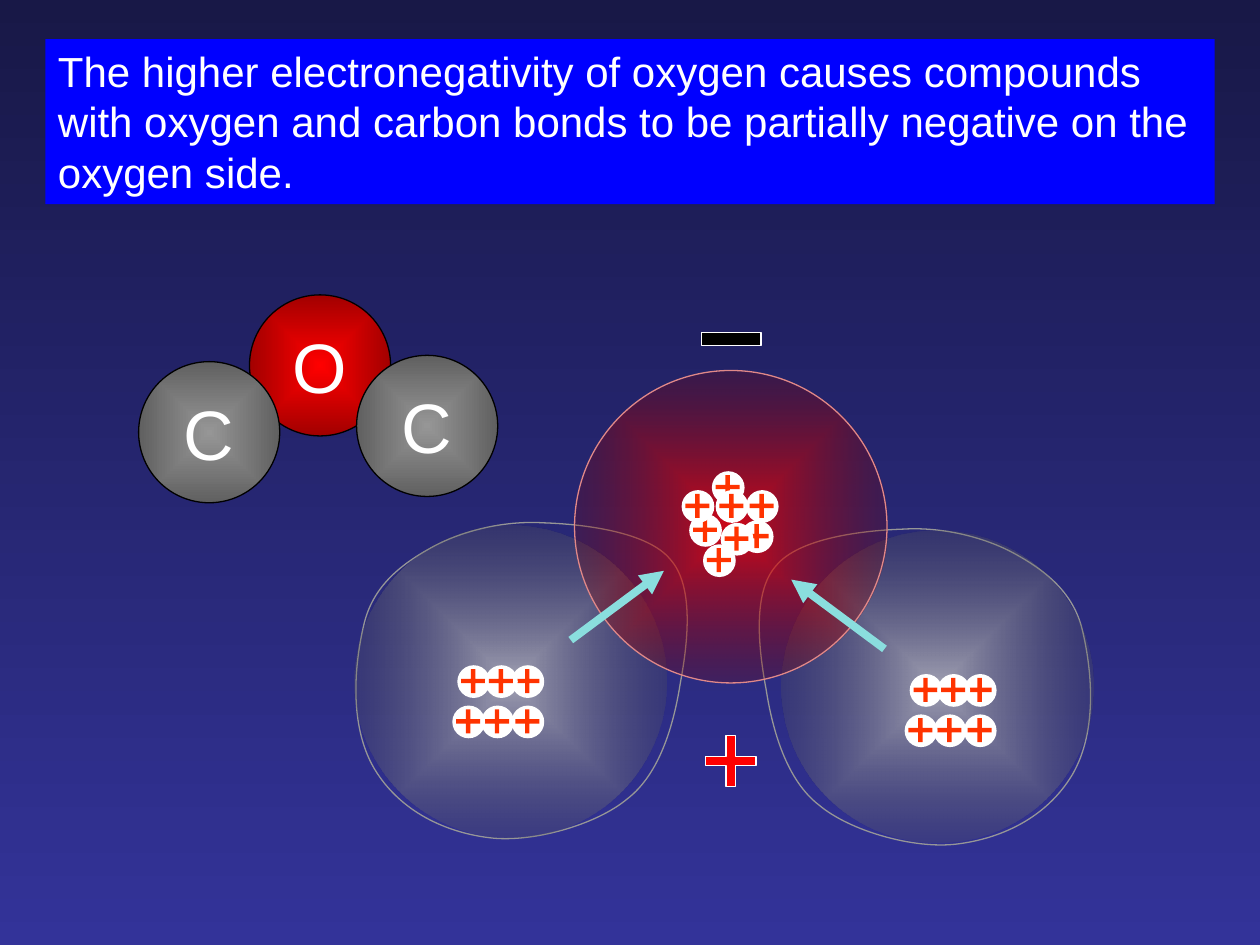
from pptx import Presentation
from pptx.dml.color import RGBColor as RGB
from pptx.enum.shapes import MSO_CONNECTOR as Conn, MSO_SHAPE as Kind
from pptx.enum.text import MSO_ANCHOR as Anchor, MSO_AUTO_SIZE as Auto, PP_ALIGN as Align
from pptx.oxml import parse_xml
from pptx.oxml.ns import nsdecls, qn
from pptx.util import Inches, Pt

HUE = {
    "top": "181847", "base": "333399", "title": "0000FF",
    "white": "FFFFFF", "black": "000000", "red": "FF0000",
    "proton": "FF3300", "arrow": "8ADEDE", "blob": "969696", "rim": "E08888",
}
FADE = {
    "carbon cloud": ("C0C0C0", 79, "595959", 25),
    "oxygen cloud": ("FF0000", 79, "760000", 25),
    "O": ("FF0000", 100, "A20000", 100),
    "C": ("969696", 100, "606060", 100),
}

deck = Presentation()
deck.slide_width, deck.slide_height = Inches(10), Inches(7.5)
slide = deck.slides.add_slide(deck.slide_layouts[5])

back = slide.background.fill
back.gradient()
back.gradient_angle = 270
for stop, name in zip(back.gradient_stops, ("top", "base")):
    stop.color.rgb = RGB.from_string(HUE[name])


def draw(home, kind, x, y, wide, high, fill, line=None):
    shape = home.add_shape(kind, Inches(x), Inches(y), Inches(wide), Inches(high))
    shape.shadow.inherit = False
    if kind == Kind.CROSS:
        shape.adjustments[0] = 0.409
    if fill in FADE:
        core, dense, edge, thin = FADE[fill]
        shape._element.spPr.insert(2, parse_xml(
            f'<a:gradFill {nsdecls("a")} rotWithShape="1"><a:gsLst>'
            f'<a:gs pos="0"><a:srgbClr val="{core}"><a:alpha val="{dense * 1000}"/></a:srgbClr></a:gs>'
            f'<a:gs pos="100000"><a:srgbClr val="{edge}"><a:alpha val="{thin * 1000}"/></a:srgbClr></a:gs>'
            '</a:gsLst><a:path path="shape">'
            '<a:fillToRect l="50000" t="50000" r="50000" b="50000"/></a:path></a:gradFill>'))
    else:
        shape.fill.solid()
        shape.fill.fore_color.rgb = RGB.from_string(HUE[fill])
    if line:
        shape.line.color.rgb = RGB.from_string(HUE[line])
        shape.line.width = Pt(0.75)
    else:
        shape.line.fill.background()
    return shape


def add_protons(spots, dx=0, dy=0):
    for x, y in spots:
        group = slide.shapes.add_group_shape().shapes
        draw(group, Kind.OVAL, x + dx, y + dy, 0.26, 0.26, "white")
        draw(group, Kind.CROSS, x + dx + 0.03, y + dy + 0.03, 0.19, 0.19, "proton")


title = slide.shapes.title
title.left, title.top = Inches(0.36), Inches(0.31)
title.width, title.height = Inches(9.28), Inches(1.31)
title.fill.solid()
title.fill.fore_color.rgb = RGB.from_string(HUE["title"])
frame = title.text_frame
frame.word_wrap = True
frame.auto_size = Auto.SHAPE_TO_FIT_TEXT
frame.vertical_anchor = Anchor.TOP
para = frame.paragraphs[0]
para.alignment = Align.LEFT
run = para.add_run()
run.text = ("The higher electronegativity of oxygen causes compounds with oxygen "
            "and carbon bonds to be partially negative on the oxygen side.")
run.font.name, run.font.size = "Arial", Pt(24)
run.font.color.rgb = RGB.from_string(HUE["white"])

knots = [
    (3.89, 6.65),
    (3.55, 6.61), (3.18, 6.45), (2.97, 6.1),
    (2.76, 5.74), (2.82, 5.24), (2.89, 4.95),
    (2.96, 4.66), (3.17, 4.49), (3.4, 4.36),
    (3.64, 4.22), (3.99, 4.13), (4.31, 4.15),
    (4.63, 4.16), (5.14, 4.22), (5.32, 4.44),
    (5.51, 4.65), (5.46, 5.1), (5.4, 5.42),
    (5.35, 5.74), (5.24, 6.14), (4.98, 6.34),
    (4.73, 6.55), (4.22, 6.69), (3.89, 6.65),
]
mirror = [(11.48 - x, y + 0.05) for x, y in knots]
for blob in (knots, mirror):
    spots = [(Inches(x), Inches(y)) for x, y in blob]
    pen = slide.shapes.build_freeform(*spots[0])
    pen.add_line_segments(spots[1:], close=True)
    ring = pen.convert_to_shape()
    lines = list(ring._element.iter(qn("a:lnTo")))
    for i in range(0, len(lines), 3):
        curve = parse_xml(f'<a:cubicBezTo {nsdecls("a")}/>')
        lines[i].addprevious(curve)
        for line in lines[i:i + 3]:
            curve.append(line[0])
            line.getparent().remove(line)
    ring.shadow.inherit = False
    ring.fill.background()
    ring.line.color.rgb = RGB.from_string(HUE["blob"])
    ring.line.width = Pt(0.75)

carbon = [(3.63, 5.28), (4.06, 5.28), (3.82, 5.6), (3.59, 5.6), (3.85, 5.28), (4.06, 5.6)]
oxygen = [(5.65, 3.74), (5.92, 3.89), (5.47, 4.08), (5.68, 3.89),
          (5.88, 4.13), (5.72, 4.15), (5.41, 3.89), (5.58, 4.32)]

for x, y in ((6.2, 4.21), (2.81, 4.17)):
    draw(slide.shapes, Kind.OVAL, x, y, 2.48, 2.48, "carbon cloud")
add_protons(carbon)
add_protons(carbon, 3.59, 0.07)

draw(slide.shapes, Kind.CROSS, 5.6, 5.84, 0.4, 0.4, "red", "white")
draw(slide.shapes, Kind.OVAL, 4.56, 2.94, 2.48, 2.48, "oxygen cloud", "rim")
draw(slide.shapes, Kind.RECTANGLE, 5.57, 2.64, 0.47, 0.1, "black", "white")
add_protons(oxygen)

for x1, y1, x2, y2 in ((4.53, 5.08, 5.27, 4.53), (7.02, 5.15, 6.28, 4.6)):
    arrow = slide.shapes.add_connector(
        Conn.STRAIGHT, Inches(x1), Inches(y1), Inches(x2), Inches(y2))
    arrow.line.color.rgb = RGB.from_string(HUE["arrow"])
    arrow.line.width = Pt(4.5)
    arrow.line._get_or_add_ln().append(
        parse_xml(f'<a:tailEnd {nsdecls("a")} type="triangle"/>'))
    arrow._element.spPr.append(parse_xml(f'<a:effectLst {nsdecls("a")}/>'))

for name, x, y in (("O", 1.98, 2.34), ("C", 2.83, 2.82), ("C", 1.1, 2.87)):
    atom = draw(slide.shapes, Kind.OVAL, x, y, 1.12, 1.12, name, "black")
    frame = atom.text_frame
    frame.word_wrap = False
    frame.vertical_anchor = Anchor.MIDDLE
    para = frame.paragraphs[0]
    para.alignment = Align.CENTER
    run = para.add_run()
    run.text = name
    run.font.name, run.font.size = "Arial", Pt(40)
    run.font.color.rgb = RGB.from_string(HUE["white"])

deck.save("out.pptx")
